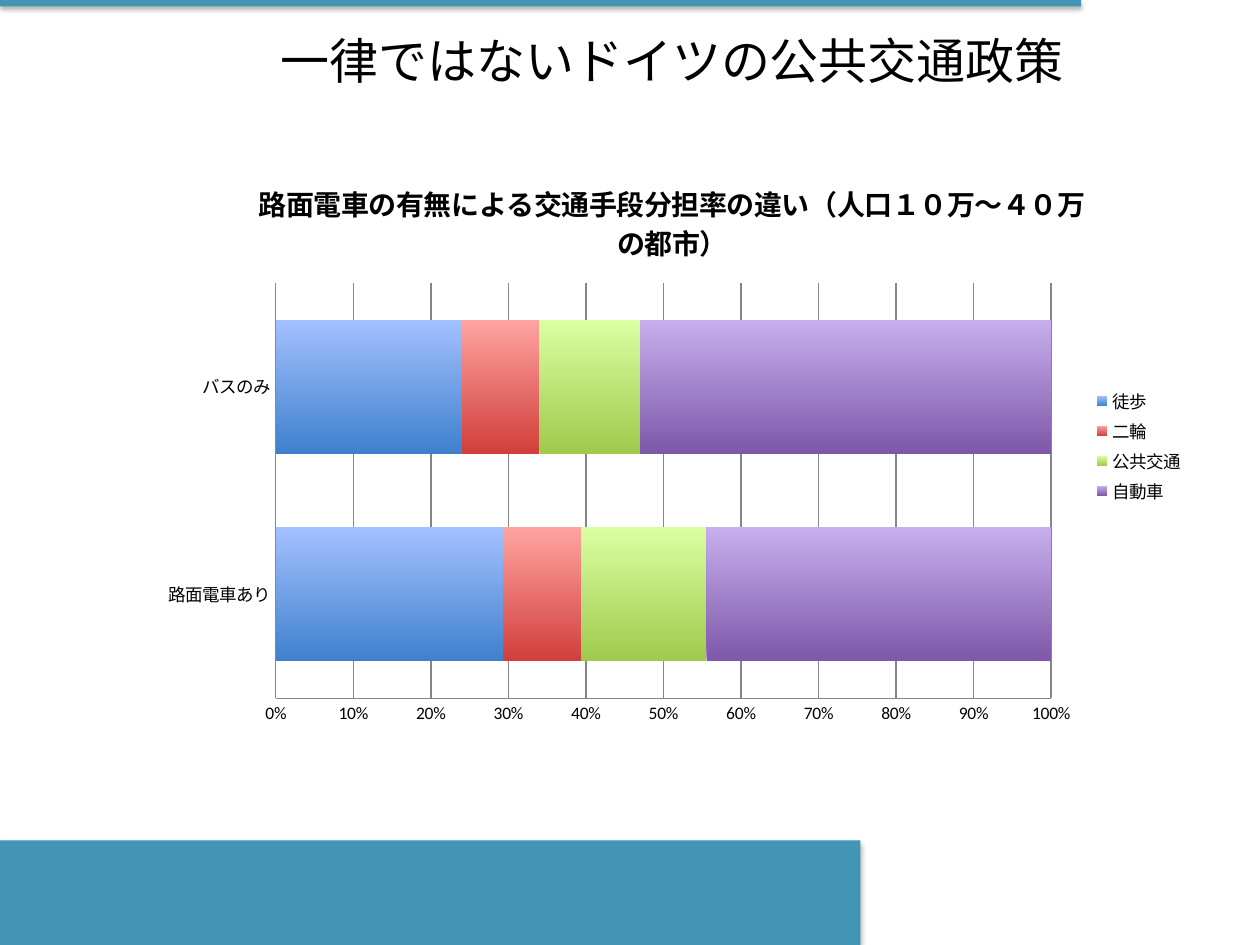
from typing import NamedTuple

from lxml import etree
from pptx import Presentation
from pptx.chart.data import CategoryChartData
from pptx.dml.color import RGBColor
from pptx.enum.chart import XL_CHART_TYPE as ChartType
from pptx.enum.chart import XL_LEGEND_POSITION as LegendPos
from pptx.enum.chart import XL_TICK_MARK as Tick
from pptx.enum.shapes import MSO_SHAPE as Shape
from pptx.enum.text import MSO_ANCHOR as Anchor
from pptx.enum.text import PP_ALIGN as Align
from pptx.oxml import parse_xml
from pptx.oxml.ns import nsdecls, qn
from pptx.util import Inches, Pt

TEAL = RGBColor(0x42, 0x95, 0xB5)
BLACK = RGBColor(0, 0, 0)
GRAY = RGBColor(0x86, 0x86, 0x86)
FONT = "Calibri"


class Band(NamedTuple):
    top: float
    width: float
    height: float


class Mode(NamedTuple):
    name: str
    shares: tuple[int, int]
    dark: RGBColor
    light: RGBColor


BANDS = [Band(6.67, 6.83, 0.83), Band(0, 8.58, 0.05)]
CITIES = ["路面電車あり", "バスのみ"]
MODES = [
    Mode("徒歩", (29, 24), RGBColor(0x3F, 0x80, 0xCD), RGBColor(0xA3, 0xC1, 0xFF)),
    Mode("二輪", (10, 10), RGBColor(0xD1, 0x3F, 0x3B), RGBColor(0xFF, 0xA3, 0xA1)),
    Mode("公共交通", (16, 13), RGBColor(0x9F, 0xCA, 0x4C), RGBColor(0xDA, 0xFF, 0xA3)),
    Mode("自動車", (44, 53), RGBColor(0x7E, 0x58, 0xA9), RGBColor(0xC7, 0xAE, 0xED)),
]


def style_font(font, size: float, bold: bool = False) -> None:
    for name, value in {"name": FONT, "size": Pt(size), "bold": bold}.items():
        setattr(font, name, value)
    font.color.rgb = BLACK


def add_band(s, band: Band) -> None:
    sp = s.shapes.add_shape(Shape.RECTANGLE, 0, Inches(band.top),
                            Inches(band.width), Inches(band.height))
    sp.fill.solid()
    sp.fill.fore_color.rgb = TEAL
    sp.line.fill.background()
    sp.shadow.inherit = False
    shadow = etree.SubElement(
        sp._element.spPr.find(qn("a:effectLst")), qn("a:outerShdw"),
        blurRad=str(Pt(3.1)), dist=str(Pt(1.8)), dir="5400000", rotWithShape="0")
    shadow.append(parse_xml(
        f'<a:srgbClr {nsdecls("a")} val="000000"><a:alpha val="35000"/></a:srgbClr>'))


def add_title(s, text: str) -> None:
    tf = s.shapes.add_textbox(Inches(1.17), Inches(0.21),
                              Inches(8.33), Inches(0.53)).text_frame
    tf.word_wrap = True
    tf.vertical_anchor = Anchor.MIDDLE
    p = tf.paragraphs[0]
    p.alignment = Align.CENTER
    r = p.add_run()
    r.text = text
    style_font(r.font, 28)


def add_share_chart(s, title: str) -> None:
    data = CategoryChartData()
    data.categories = CITIES
    for mode in MODES:
        data.add_series(mode.name, mode.shares)
    chart = s.shapes.add_chart(ChartType.BAR_STACKED_100, Inches(1.17), Inches(1.25),
                               Inches(8.33), Inches(4.58), data).chart
    style_font(chart.font, 10)

    # Title and legend
    chart.has_title = True
    r = chart.chart_title.text_frame.paragraphs[0].add_run()
    r.text = title
    style_font(r.font, 16, bold=True)
    chart.has_legend = True
    chart.legend.position = LegendPos.RIGHT
    chart.legend.include_in_layout = False

    # Axes
    for axis in (chart.category_axis, chart.value_axis):
        axis.major_tick_mark = axis.minor_tick_mark = Tick.NONE
        axis.format.line.color.rgb = GRAY
    chart.category_axis.format.line.fill.background()
    value_axis = chart.value_axis
    value_axis.has_major_gridlines = True
    value_axis.major_gridlines.format.line.color.rgb = GRAY
    value_axis.tick_labels.number_format = "0%"
    value_axis.tick_labels.number_format_is_linked = False

    # Bars, shaded from dark at the bottom to light at the top
    plot = chart.plots[0]
    plot.gap_width, plot.overlap, plot.vary_by_categories = 55, 100, False
    for series, mode in zip(plot.series, MODES):
        fill = series.format.fill
        fill.gradient()
        fill.gradient_angle = 90
        for stop, color, position in zip(fill.gradient_stops,
                                         (mode.dark, mode.light), (0, 1)):
            stop.color.rgb = color
            stop.position = position


def main() -> None:
    prs = Presentation()
    prs.slide_width, prs.slide_height = Inches(10), Inches(7.5)
    s = prs.slides.add_slide(prs.slide_layouts[6])
    for band in BANDS:
        add_band(s, band)
    add_title(s, "一律ではないドイツの公共交通政策")
    add_share_chart(s, "路面電車の有無による交通手段分担率の違い（人口１０万〜４０万の都市）")
    prs.save("out.pptx")


if __name__ == "__main__":
    main()
